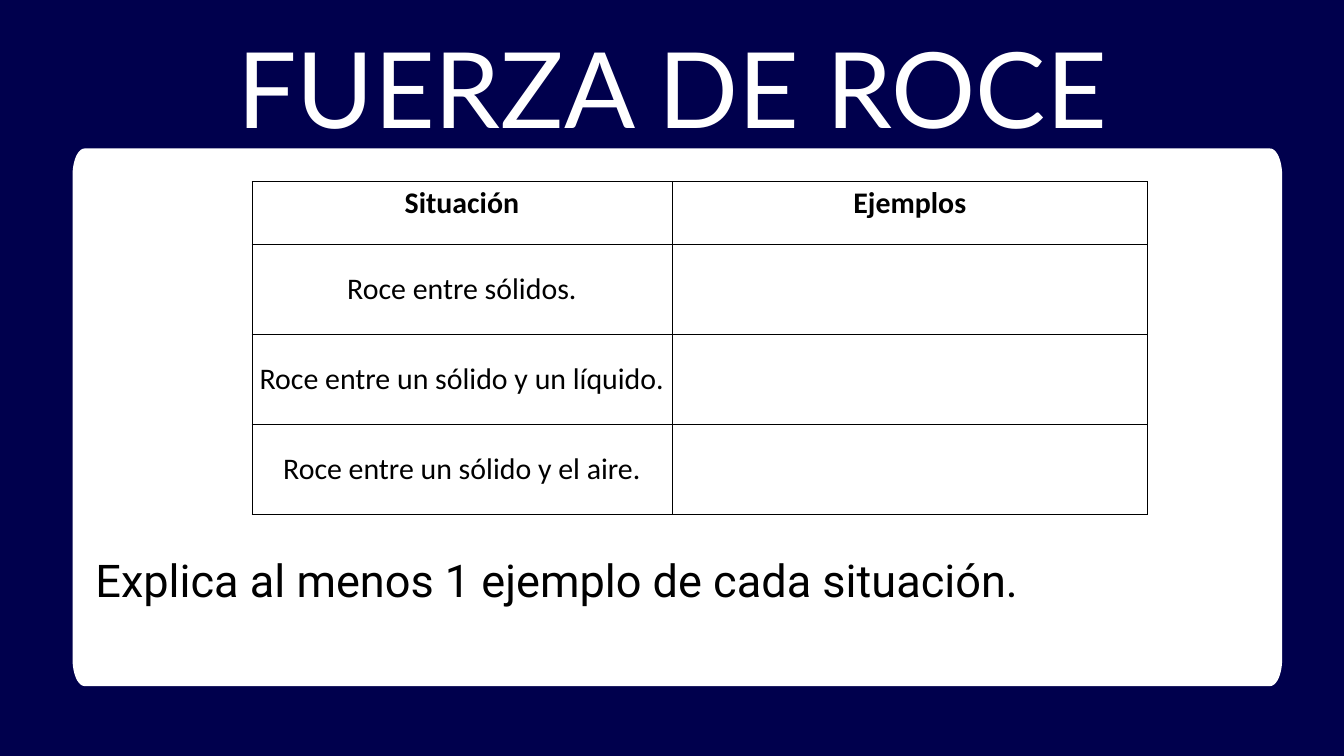
from collections import namedtuple
from math import cos, pi, sin

from lxml.etree import SubElement
from pptx import Presentation
from pptx.dml.color import RGBColor
from pptx.enum.text import MSO_ANCHOR, PP_ALIGN
from pptx.oxml.ns import qn
from pptx.util import Inches, Pt

NAVY = RGBColor(0x00, 0x00, 0x4D)
WHITE = RGBColor(0xFF, 0xFF, 0xFF)
BLACK = RGBColor(0x00, 0x00, 0x00)

SLIDE_WIDTH = Inches(20)
SLIDE_HEIGHT = Inches(11.25)
GRID_COLUMNS = 100
UNIT = SLIDE_WIDTH / GRID_COLUMNS

Box = namedtuple("Box", "left top width height")

TITLE_BOX = Box(3.45, 0.15, 93.15, 9.9)
PANEL_BOX = Box(5.4, 11.05, 90, 40)
TABLE_BOX = Box(18.75, 13.5, 66.65, 24.75)
TASK_BOX = Box(7.1, 40.4, 86.65, 4.75)

HEADER_ROW = 4.65
SITUATION_COLUMN = 31.25
ROWS = [
    ("Situación", "Ejemplos"),
    ("Roce entre sólidos.", ""),
    ("Roce entre un sólido y un líquido.", ""),
    ("Roce entre un sólido y el aire.", ""),
]


def grid(value):
    return round(value * UNIT)


def write_text(frame, text, *, font, size, color, align, bold=False, line_spacing=None):
    paragraph = frame.paragraphs[0]
    paragraph.alignment = align
    if line_spacing:
        paragraph.line_spacing = Pt(line_spacing)
    run = paragraph.add_run()
    run.text = text
    run.font.name = font
    run.font.size = Pt(size)
    run.font.bold = bold
    run.font.color.rgb = color


def add_text(slide, box, text, **text_format):
    frame = slide.shapes.add_textbox(*map(grid, box)).text_frame
    frame.word_wrap = True
    frame.margin_left = frame.margin_right = 0
    frame.margin_top = frame.margin_bottom = 0
    write_text(frame, text, **text_format)


def add_panel(slide, box, radius_x=0.9, radius_y=2, steps=12):
    center_x, center_y = box.left + box.width / 2, box.top + box.height / 2
    reach_x, reach_y = box.width / 2 - radius_x, box.height / 2 - radius_y
    points = []
    for corner, (side_x, side_y) in enumerate([(1, 1), (-1, 1), (-1, -1), (1, -1)]):
        for step in range(steps + 1):
            angle = (corner + step / steps) * pi / 2
            points.append((
                grid(center_x + side_x * reach_x + radius_x * cos(angle)),
                grid(center_y + side_y * reach_y + radius_y * sin(angle)),
            ))
    builder = slide.shapes.build_freeform(*points[0])
    builder.add_line_segments(points[1:], close=True)
    shape = builder.convert_to_shape()
    shape.shadow.inherit = False
    shape.fill.solid()
    shape.fill.fore_color.rgb = WHITE
    shape.line.fill.background()


def add_borders(cell, color, width):
    properties = cell._tc.get_or_add_tcPr()
    for position, side in enumerate(("lnL", "lnR", "lnT", "lnB")):
        line = SubElement(properties, qn(f"a:{side}"), w=str(Pt(width)))
        fill = SubElement(line, qn("a:solidFill"))
        SubElement(fill, qn("a:srgbClr"), val=str(color))
        properties.insert(position, line)


def add_situations(slide, box):
    table = slide.shapes.add_table(len(ROWS), 2, *map(grid, box)).table
    table.first_row = table.horz_banding = False
    table.columns[0].width = grid(SITUATION_COLUMN)
    table.columns[1].width = grid(box.width - SITUATION_COLUMN)
    body_row = (box.height - HEADER_ROW) / (len(ROWS) - 1)
    for row, texts in enumerate(ROWS):
        table.rows[row].height = grid(body_row if row else HEADER_ROW)
        for column, text in enumerate(texts):
            cell = table.cell(row, column)
            cell.fill.solid()
            cell.fill.fore_color.rgb = WHITE
            add_borders(cell, BLACK, 1)
            cell.vertical_anchor = MSO_ANCHOR.MIDDLE if row else MSO_ANCHOR.TOP
            if text:
                write_text(cell.text_frame, text, font="Calibri", size=32,
                           color=BLACK, align=PP_ALIGN.CENTER, bold=row == 0)


def add_friction_slide(presentation):
    slide = presentation.slides.add_slide(presentation.slide_layouts[6])
    slide.background.fill.solid()
    slide.background.fill.fore_color.rgb = NAVY
    add_panel(slide, PANEL_BOX)
    add_text(slide, TASK_BOX, "Explica al menos 1 ejemplo de cada situación.",
             font="Roboto", size=48.3, color=BLACK,
             align=PP_ALIGN.JUSTIFY, line_spacing=67.7)
    add_text(slide, TITLE_BOX, "FUERZA DE ROCE",
             font="Lato", size=112.8, color=WHITE,
             align=PP_ALIGN.CENTER, line_spacing=157.9)
    add_situations(slide, TABLE_BOX)


def main():
    presentation = Presentation()
    presentation.slide_width = SLIDE_WIDTH
    presentation.slide_height = SLIDE_HEIGHT
    add_friction_slide(presentation)
    presentation.save("out.pptx")


if __name__ == "__main__":
    main()
